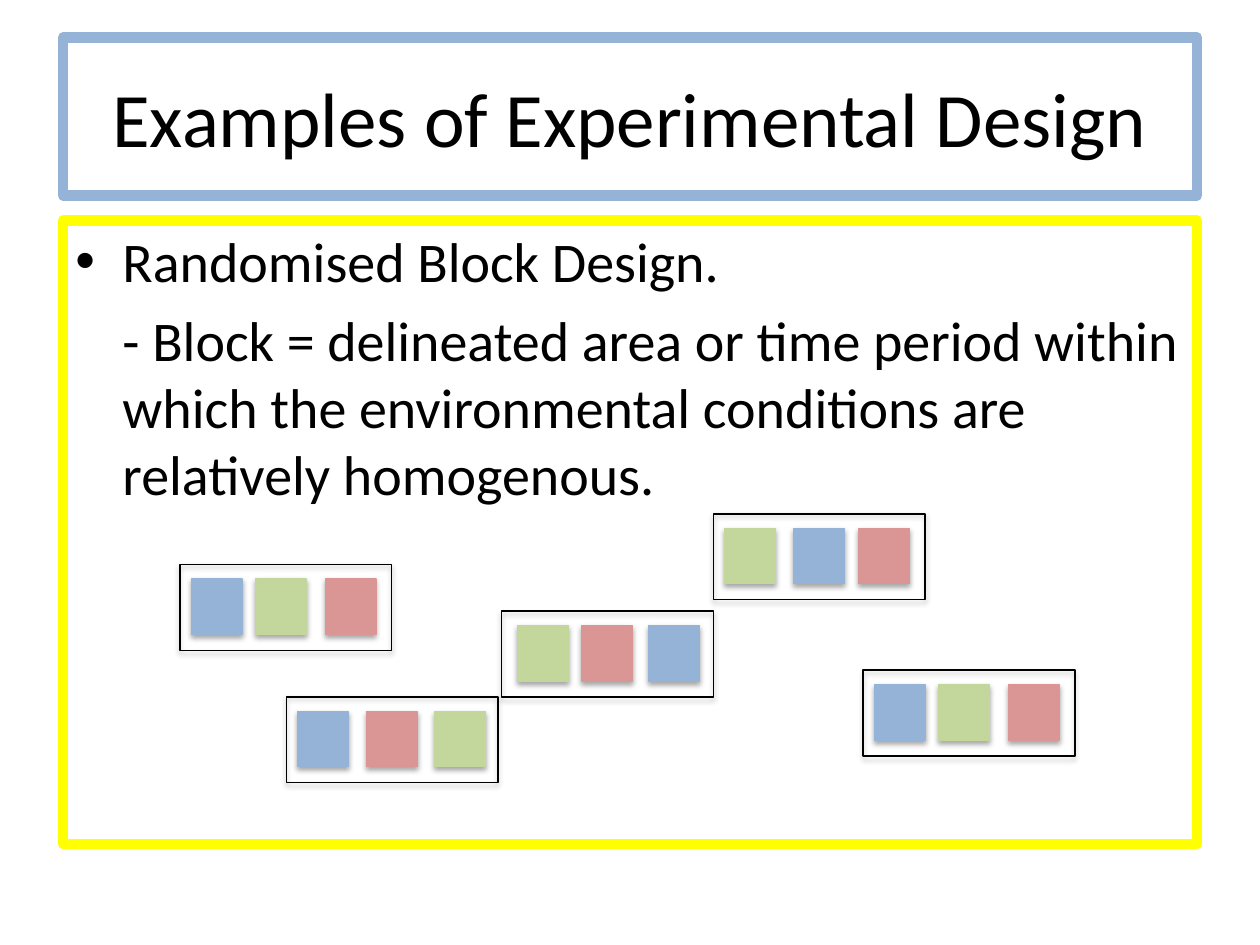
from lxml import etree
from pptx import Presentation
from pptx.dml.color import RGBColor
from pptx.enum.shapes import MSO_SHAPE
from pptx.enum.text import MSO_ANCHOR, PP_ALIGN
from pptx.oxml.ns import qn
from pptx.util import Cm, Pt

RECTANGLE = MSO_SHAPE.RECTANGLE
MIDDLE, TOP = MSO_ANCHOR.MIDDLE, MSO_ANCHOR.TOP
CENTER, LEFT = PP_ALIGN.CENTER, PP_ALIGN.LEFT
TITLE_ONLY = 5
FONT = "Calibri"
COLOURS = {
    "text": "000000",
    "outline": "000000",
    "title_frame": "95B3D7",
    "body_frame": "FFFF00",
    "blue": "95B3D7",
    "green": "C3D69B",
    "red": "D99694",
}
BLOCK_SIZE = (4.27, 1.73)
PLOT_SIZE = (1.02, 1.12)
PLOT_TOP = 0.29
BLOCKS = [
    (3.63, 11.38, {"blue": 0.23, "green": 1.52, "red": 2.93}),
    (17.4, 13.51, {"blue": 0.23, "green": 1.52, "red": 2.93}),
    (14.38, 10.36, {"green": 0.23, "blue": 1.62, "red": 2.93}),
    (5.77, 14.05, {"blue": 0.23, "red": 1.62, "green": 3.0}),
    (10.11, 12.32, {"green": 0.33, "red": 1.62, "blue": 2.97}),
]


def colour(name):
    """Return the named colour."""
    return RGBColor.from_string(COLOURS[name])


def place(box, left, top, width, height):
    """Position and size a box in centimetres."""
    box.left, box.top = Cm(left), Cm(top)
    box.width, box.height = Cm(width), Cm(height)


def outline(box, name, width):
    """Draw a solid line around a box."""
    box.line.color.rgb = colour(name)
    box.line.width = Pt(width)


def write(para, text, size, align=LEFT, before=0):
    """Put formatted text in a paragraph."""
    para.alignment = align
    para.space_before = Pt(before)
    span = para.add_run()
    span.text = text
    span.font.name = FONT
    span.font.size = Pt(size)
    span.font.color.rgb = colour("text")


def indent(para, bullet=None):
    """Indent a paragraph, hanging its bullet when there is one."""
    margin = Cm(0.95)
    props = para._p.get_or_add_pPr()
    props.set("marL", str(margin))
    props.set("indent", str(-margin if bullet else 0))
    if bullet:
        etree.SubElement(props, qn("a:buFont"), typeface="Arial")
        etree.SubElement(props, qn("a:buChar"), char=bullet)
    else:
        etree.SubElement(props, qn("a:buNone"))


def add_shadow(box):
    """Give a box a soft shadow below it."""
    box.shadow.inherit = False
    effects = box._element.spPr.find(qn("a:effectLst"))
    shadow = etree.SubElement(
        effects, qn("a:outerShdw"), blurRad=str(Pt(3.1)), dist=str(Pt(1.8)),
        dir="5400000", rotWithShape="0")
    tint = etree.SubElement(shadow, qn("a:srgbClr"), val=COLOURS["outline"])
    etree.SubElement(tint, qn("a:alpha"), val="35000")


def add_rectangle(page, left, top, size, line, fill=None):
    """Add a shadowed rectangle, filled when a fill is named."""
    box = page.shapes.add_shape(RECTANGLE, Cm(left), Cm(top), *map(Cm, size))
    if fill:
        box.fill.solid()
        box.fill.fore_color.rgb = colour(fill)
    else:
        box.fill.background()
    outline(box, line, 0.75)
    add_shadow(box)


def add_block(page, left, top, plots):
    """Add a block with its three treatment plots."""
    add_rectangle(page, left, top, BLOCK_SIZE, "outline")
    for name, offset in plots.items():
        add_rectangle(page, left + offset, top + PLOT_TOP, PLOT_SIZE, name, name)


def add_title(page):
    """Fill and frame the title placeholder."""
    title = page.shapes.title
    place(title, 1.27, 0.76, 22.86, 3.18)
    outline(title, "title_frame", 6)
    title.text_frame.vertical_anchor = MIDDLE
    write(title.text_frame.paragraphs[0], "Examples of Experimental Design", 44, CENTER)


def add_body(page):
    """Add the framed explanation of the design."""
    body = page.shapes.add_textbox(0, 0, 0, 0)
    place(body, 1.27, 4.45, 22.86, 12.57)
    outline(body, "body_frame", 6)
    frame = body.text_frame
    frame.word_wrap = True
    frame.vertical_anchor = TOP
    heading = frame.paragraphs[0]
    write(heading, "Randomised Block Design.", 32, before=6.4)
    indent(heading, "•")
    definition = frame.add_paragraph()
    write(definition, "- Block = delineated area or time period within which the "
          "environmental conditions are relatively homogenous.", 32, before=6.4)
    indent(definition)


def main():
    """Build and save the deck."""
    deck = Presentation()
    deck.slide_width, deck.slide_height = Cm(25.4), Cm(19.05)
    page = deck.slides.add_slide(deck.slide_layouts[TITLE_ONLY])
    add_title(page)
    add_body(page)
    for left, top, plots in BLOCKS:
        add_block(page, left, top, plots)
    deck.save("out.pptx")


if __name__ == "__main__":
    main()
